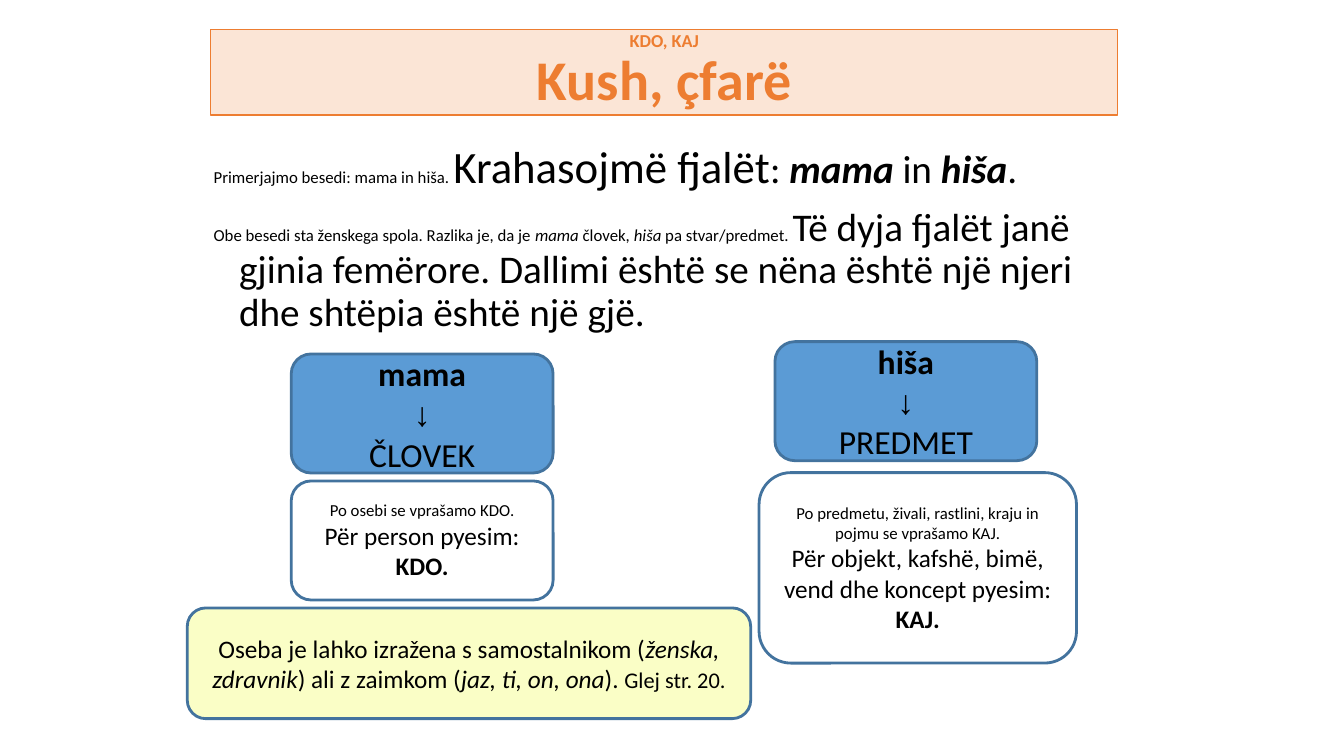
from lxml.etree import SubElement
from pptx import Presentation
from pptx.dml.color import RGBColor
from pptx.enum.shapes import MSO_SHAPE
from pptx.enum.text import MSO_ANCHOR, MSO_AUTO_SIZE, PP_ALIGN
from pptx.oxml.ns import qn
from pptx.util import Cm, Pt

COLORS = {
    "text": "000000",
    "accent": "ED7D31",
    "title_fill": "FBE5D6",
    "word": "5B9BD5",
    "question": "FFFFFF",
    "note": "FAFEC6",
    "outline": "43739E",
}


def paint(shape, fill, outline, width):
    shape.fill.solid()
    shape.fill.fore_color.rgb = RGBColor.from_string(COLORS[fill])
    shape.line.color.rgb = RGBColor.from_string(COLORS[outline])
    shape.line.width = Pt(width)


def write(paragraph, pieces, color="text"):
    paragraph.text = pieces[0][0]
    for words, size, style in pieces[1:]:
        paragraph.add_run().text = words
    for run, (words, size, style) in zip(paragraph.runs, pieces):
        run.font.name = "Arial" if words == "↓" else "Calibri"
        run.font.size = Pt(size)
        run.font.bold = "b" in style
        run.font.italic = "i" in style
        run.font.color.rgb = RGBColor.from_string(COLORS[color])


prs = Presentation()
prs.slide_width, prs.slide_height = Cm(33.87), Cm(19.05)
slide = prs.slides.add_slide(prs.slide_layouts[1])

title, body = slide.placeholders
title.left, title.top, title.width, title.height = Cm(5.31), Cm(0.74), Cm(22.86), Cm(2.16)
body.left, body.top, body.width, body.height = Cm(5.13), Cm(3.53), Cm(23.24), Cm(12.57)
for placeholder in (title, body):
    placeholder.text_frame.auto_size = MSO_AUTO_SIZE.NONE
    placeholder.text_frame.word_wrap = True

paint(title, "title_fill", "accent", 1)
title.text_frame.vertical_anchor = MSO_ANCHOR.MIDDLE
heading = title.text_frame.paragraphs[0]
heading.alignment = PP_ALIGN.CENTER
heading.line_spacing = 0.9
write(heading, [("KDO, KAJ", 13, "b")], "accent")
heading.add_line_break()
SubElement(heading._p.find(qn("a:br")), qn("a:rPr"), sz="1300")
heading.add_run().text = "Kush, çfarë"
question_words = heading.runs[1].font
question_words.name, question_words.size, question_words.bold = "Calibri", Pt(40), True
question_words.color.rgb = RGBColor.from_string(COLORS["accent"])

comparison = [
    [
        ("Primerjajmo besedi: mama in hiša. ", 12, ""),
        ("Krahasojmë fjalët", 32, ""),
        (": ", 28, ""),
        ("mama", 28, "bi"),
        (" in ", 28, ""),
        ("hiša", 28, "bi"),
        (".", 28, ""),
    ],
    [
        ("Obe besedi sta ženskega spola. Razlika je, da je ", 12, ""),
        ("mama", 12, "i"),
        (" človek, ", 12, ""),
        ("hiša", 12, "i"),
        (" pa stvar/predmet. ", 12, ""),
        ("Të dyja fjalët janë gjinia femërore. Dallimi është se nëna është "
         "një njeri dhe shtëpia është një gjë.", 28, ""),
    ],
]
body.text_frame.text = "\n" * (len(comparison) - 1)
for paragraph, pieces in zip(body.text_frame.paragraphs, comparison):
    write(paragraph, pieces)
    paragraph.line_spacing = 0.9
    paragraph.space_before = Pt(10)
    properties = paragraph._p.get_or_add_pPr()
    properties.set("marL", str(Cm(0.64)))
    properties.set("indent", str(-Cm(0.64)))
    SubElement(properties, qn("a:buNone"))

boxes = [
    ("word", 7.34, 8.92, 6.6, 3,
     [[("mama", 24, "b")], [("↓", 24, "")], [("ČLOVEK", 24, "")]]),
    ("word", 19.53, 8.61, 6.6, 3,
     [[("hiša", 24, "b")], [("↓", 24, "")], [("PREDMET", 24, "")]]),
    ("question", 7.34, 12.12, 6.6, 3,
     [[("Po osebi se vprašamo KDO.", 12, "")],
      [("Për person pyesim:", 18, "")],
      [("KDO.", 18, "b")]]),
    ("question", 19.13, 11.91, 8, 4.8,
     [[("Po predmetu, živali, rastlini, kraju in pojmu se vprašamo KAJ.", 12, "")],
      [("Për objekt, kafshë, bimë, vend dhe koncept pyesim:", 18, "")],
      [("KAJ.", 18, "b")]]),
    ("note", 4.72, 15.32, 14.2, 2.79,
     [[("Oseba je lahko izražena s samostalnikom (", 18, ""),
       ("ženska, zdravnik", 18, "i"),
       (") ali z zaimkom (", 18, ""),
       ("jaz, ti, on, ona", 18, "i"),
       ("). ", 18, ""),
       ("Glej str. 20.", 16, "")]]),
]
for fill, left, top, width, height, lines in boxes:
    box = slide.shapes.add_shape(
        MSO_SHAPE.ROUNDED_RECTANGLE, Cm(left), Cm(top), Cm(width), Cm(height))
    box.shadow.inherit = False
    paint(box, fill, "outline", 2)
    frame = box.text_frame
    frame.word_wrap = True
    frame.vertical_anchor = MSO_ANCHOR.MIDDLE
    frame.text = "\n" * (len(lines) - 1)
    for paragraph, pieces in zip(frame.paragraphs, lines):
        paragraph.alignment = PP_ALIGN.CENTER
        write(paragraph, pieces)

prs.save("out.pptx")
